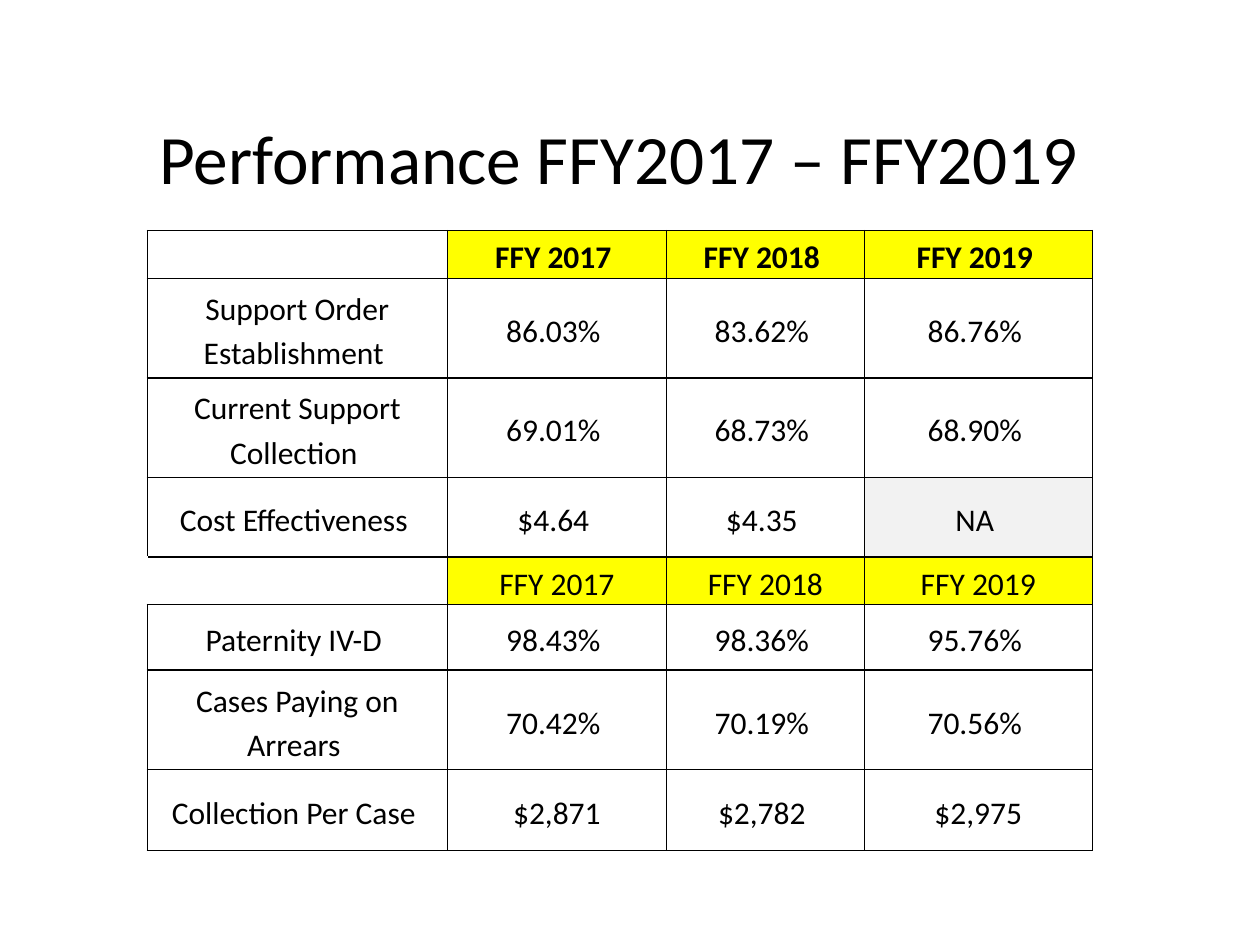
import pptx
import pptx.util
from lxml import etree
from pptx.dml.color import RGBColor
from pptx.enum.text import MSO_ANCHOR, PP_ALIGN
from pptx.oxml.ns import qn
from pptx.util import Inches, Pt

COLORS = {"text": "000000", "line": "000000", "blank": "FFFFFF",
          "year": "FFFF00", "missing": "F2F2F2"}
FONT = "Calibri"
COL_WIDTHS = [2.38, 1.74, 1.57, 1.81]
ROW_HEIGHTS = [0.38, 0.79, 0.79, 0.63, 0.38, 0.52, 0.79, 0.64]
ROWS = [
    ["", "FFY 2017 ", "FFY 2018 ", "FFY 2019 "],
    ["Support Order Establishment ", "86.03% ", "83.62% ", "86.76% "],
    ["Current Support Collection ", "69.01% ", "68.73% ", "68.90% "],
    ["Cost Effectiveness ", "$4.64 ", "$4.35 ", "NA "],
    ["", "FFY 2017", "FFY 2018", "FFY 2019"],
    ["Paternity IV-D ", "98.43% ", "98.36% ", "95.76% "],
    ["Cases Paying on Arrears ", "70.42% ", "70.19% ", "70.56% "],
    ["Collection Per Case ", "$2,871", "$2,782 ", "$2,975"],
]
SECOND_HEADER = 4


def style_font(font, size, bold=False):
    font.name = FONT
    font.size = Pt(size)
    font.bold = bold
    font.color.rgb = RGBColor.from_string(COLORS["text"])


def add_title(s, text, left, top, width, height):
    sp = s.shapes.title
    sp.left, sp.top = Inches(left), Inches(top)
    sp.width, sp.height = Inches(width), Inches(height)
    tf = sp.text_frame
    tf.word_wrap = True
    tf.vertical_anchor = MSO_ANCHOR.MIDDLE
    p = tf.paragraphs[0]
    p.alignment = PP_ALIGN.CENTER
    r = p.add_run()
    r.text = text
    style_font(r.font, 39.6)


def set_borders(cell, left_color):
    """Draw 1 pt borders; only the left one varies in colour."""
    tcPr = cell._tc.get_or_add_tcPr()
    for side in "LRTB":
        ln = etree.SubElement(tcPr, qn(f"a:ln{side}"), w=str(Pt(1)))
        fill = etree.SubElement(ln, qn("a:solidFill"))
        color = left_color if side == "L" else COLORS["line"]
        etree.SubElement(fill, qn("a:srgbClr"), val=color)


def fill_cell(cell, text, bold, fill, left_color):
    set_borders(cell, left_color)
    if fill:
        cell.fill.solid()
        cell.fill.fore_color.rgb = RGBColor.from_string(fill)
    else:
        cell.fill.background()
    cell.margin_left = cell.margin_right = cell.margin_top = Inches(0.01)
    cell.margin_bottom = 0
    cell.vertical_anchor = MSO_ANCHOR.MIDDLE
    p = cell.text_frame.paragraphs[0]
    p.alignment = PP_ALIGN.CENTER
    if text:
        p.line_spacing = 1.15
        r = p.add_run()
        r.text = text
        style_font(r.font, 18, bold)
    else:
        p.font.size = Pt(18)


def add_performance_table(s, left, top):
    table = s.shapes.add_table(
        len(ROWS), len(COL_WIDTHS), Inches(left), Inches(top),
        Inches(sum(COL_WIDTHS)), Inches(sum(ROW_HEIGHTS))).table
    table.first_row = table.horz_banding = False
    for column, width in zip(table.columns, COL_WIDTHS):
        column.width = Inches(width)
    for i, (values, height) in enumerate(zip(ROWS, ROW_HEIGHTS)):
        table.rows[i].height = Inches(height)
        for j, text in enumerate(values):
            fill = None
            if text.startswith("FFY"):
                fill = COLORS["year"]
            elif text.strip() == "NA":
                fill = COLORS["missing"]
            open_left = i == SECOND_HEADER and j == 0
            left_color = COLORS["blank" if open_left else "line"]
            fill_cell(table.cell(i, j), text, i == 0, fill, left_color)


def main():
    prs = pptx.Presentation()
    prs.slide_width, prs.slide_height = Inches(10), Inches(7.5)
    s = prs.slides.add_slide(prs.slide_layouts.get_by_name("Title Only"))
    add_title(s, "Performance FFY2017 – FFY2019", 1.08, 0.83, 7.67, 0.83)
    add_performance_table(s, 1.17, 1.83)
    prs.save("out.pptx")


if __name__ == "__main__":
    main()
